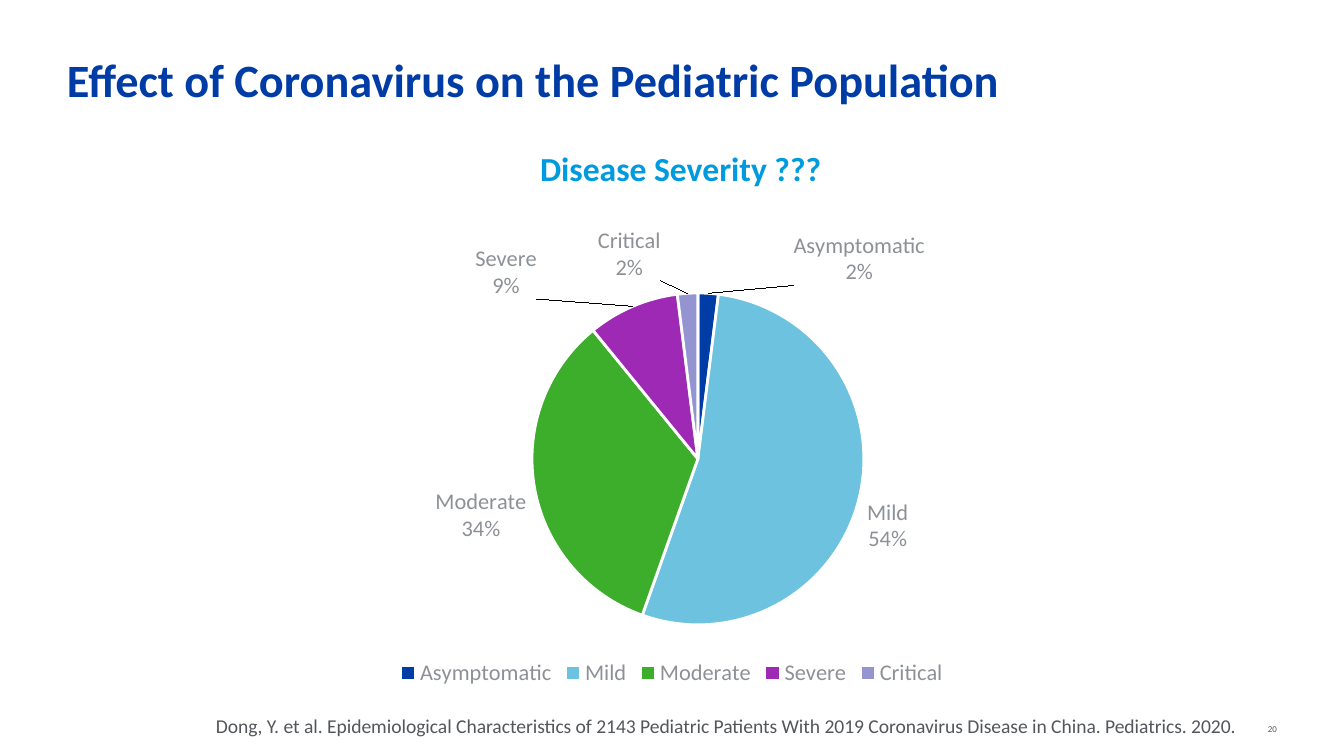
from lxml.etree import SubElement
from pptx import Presentation
from pptx.chart.data import CategoryChartData
from pptx.dml.color import RGBColor
from pptx.enum.chart import XL_CHART_TYPE, XL_LABEL_POSITION, XL_LEGEND_POSITION
from pptx.enum.text import MSO_ANCHOR, PP_ALIGN
from pptx.oxml.ns import qn
from pptx.util import Emu, Pt

PX = 914400 / 134.4
FONT = "Calibri"
NAVY = RGBColor(0x00, 0x3C, 0xA5)
SKY = RGBColor(0x00, 0x9A, 0xDF)
DARK_GRAY = RGBColor(0x53, 0x56, 0x5A)
GRAY = RGBColor(0x8D, 0x91, 0x96)
WHITE = RGBColor(0xFF, 0xFF, 0xFF)
LIGHT_BLUE = RGBColor(0x6D, 0xC3, 0xDF)
GREEN = RGBColor(0x3D, 0xAD, 0x2C)
PURPLE = RGBColor(0x9E, 0x29, 0xB5)
LAVENDER = RGBColor(0x94, 0x94, 0xD1)

# Content: text, box in px, insets in px (x, y), wrap, alignment, anchor, font
TEXTS = [
    ("Effect of Coronavirus on the Pediatric Population", (67, 51, 1210, 87), (0, 0),
     True, PP_ALIGN.LEFT, MSO_ANCHOR.TOP, dict(size=Pt(24.8), bold=True), NAVY),
    ("Disease Severity ???", (527, 141, 310, 54), (13, 7),
     False, PP_ALIGN.LEFT, MSO_ANCHOR.TOP, dict(size=Pt(18), bold=True), SKY),
    ("Dong, Y. et al. Epidemiological Characteristics of 2143 Pediatric Patients "
     "With 2019 Coronavirus Disease in China. Pediatrics. 2020.", (203, 707, 1070, 38), (13, 7),
     False, PP_ALIGN.LEFT, MSO_ANCHOR.TOP, dict(size=Pt(10.5)), DARK_GRAY),
    ("20", (1168, 703, 109, 31), (0, 0),
     True, PP_ALIGN.RIGHT, MSO_ANCHOR.BOTTOM, dict(size=Pt(4.8)), DARK_GRAY),
]
# Category, percent, colour, label shift as a share of the chart
SEVERITY = [
    ("Asymptomatic", 2, NAVY, (0.13, 0)),
    ("Mild", 54, LIGHT_BLUE, None),
    ("Moderate", 34, GREEN, None),
    ("Severe", 9, PURPLE, (-0.08, 0)),
    ("Critical", 2, LAVENDER, (-0.05, -0.01)),
]
ROUNDED_LABEL = 1  # the rounded shares add up to 101, so this label is typed
CHART_BOX = (93, 212, 1158, 480)
PIE_BOX = (532, 293, 332, 332)


def px(*lengths):
    return [Emu(round(length * PX)) for length in lengths]


def set_font(font, color, **values):
    for name, value in dict(name=FONT, **values).items():
        setattr(font, name, value)
    font.color.rgb = color


def add_text(slide, text, box, insets, wrap, align, anchor, values, color):
    frame = slide.shapes.add_textbox(*px(*box)).text_frame
    frame.margin_left, frame.margin_top = px(*insets)
    frame.margin_right, frame.margin_bottom = px(*insets)
    frame.word_wrap = wrap
    frame.vertical_anchor = anchor
    paragraph = frame.paragraphs[0]
    paragraph.alignment = align
    run = paragraph.add_run()
    run.text = text
    set_font(run.font, color, **values)


def set_layout(parent, index, values):
    """Place a chart part by shares of the chart area."""
    for old in parent.findall(qn("c:layout")):
        parent.remove(old)
    layout = SubElement(parent, qn("c:layout"))
    parent.insert(index, layout)
    manual = SubElement(layout, qn("c:manualLayout"))
    for tag, value in values.items():
        SubElement(manual, qn("c:" + tag)).set("val", str(value))


def add_severity_pie(slide):
    data = CategoryChartData()
    data.categories = [row[0] for row in SEVERITY]
    data.add_series("Series 1", [row[1] for row in SEVERITY])
    chart = slide.shapes.add_chart(XL_CHART_TYPE.PIE, *px(*CHART_BOX), data).chart
    chart.has_title = False
    set_font(chart.font, DARK_GRAY, size=Pt(10))
    chart.has_legend = True
    chart.legend.position = XL_LEGEND_POSITION.BOTTOM
    chart.legend.include_in_layout = False
    set_font(chart.legend.font, GRAY, size=Pt(12))

    # Labels for the whole series
    series = chart.plots[0].series[0]
    labels = series.data_labels
    flags = dict(show_value=False, show_category_name=True, show_percentage=True,
                 position=XL_LABEL_POSITION.OUTSIDE_END)
    for name, value in flags.items():
        setattr(labels, name, value)
    set_font(labels.font, GRAY, size=Pt(12))

    # Slices and their own labels
    for index, (category, percent, color, shift) in enumerate(SEVERITY):
        point = series.points[index]
        point.format.fill.solid()
        point.format.fill.fore_color.rgb = color
        point.format.line.color.rgb = WHITE
        point.format.line.width = Pt(1.5)
        label = point.data_label
        if index == ROUNDED_LABEL:
            label.text_frame.text = f"{category}\n{percent}%"
            for paragraph in label.text_frame.paragraphs:
                set_font(paragraph.runs[0].font, GRAY, size=Pt(12))
        elif shift:
            set_font(label.font, GRAY, size=Pt(12))
        else:
            continue
        label.position = XL_LABEL_POSITION.OUTSIDE_END

    # Category and percent on two lines, shifted where slices are thin
    for label in chart.element.iter(qn("c:dLbl"), qn("c:dLbls")):
        for tag, value in (("showVal", "0"), ("showCatName", "1"), ("showPercent", "1")):
            label.find(qn("c:" + tag)).set("val", value)
        separator = SubElement(label, qn("c:separator"))
        separator.text = "\n"
        label.find(qn("c:showBubbleSize" if label.find(qn("c:showBubbleSize")) is not None
                      else "c:showPercent")).addnext(separator)
        number = label.find(qn("c:idx"))
        shift = SEVERITY[int(number.get("val"))][3] if number is not None else None
        if shift:
            set_layout(label, 1, dict(zip("xy", shift)))

    left, top, width, height = CHART_BOX
    x, y, w, h = PIE_BOX
    shares = dict(x=(x - left) / width, y=(y - top) / height, w=w / width, h=h / height)
    plot_area = next(chart.element.iter(qn("c:plotArea")))
    set_layout(plot_area, 0, dict(layoutTarget="inner", xMode="edge", yMode="edge", **shares))


presentation = Presentation()
presentation.slide_width, presentation.slide_height = px(1344, 756)
slide = presentation.slides.add_slide(presentation.slide_layouts[6])
add_severity_pie(slide)
for text in TEXTS:
    add_text(slide, *text)
presentation.save("out.pptx")
